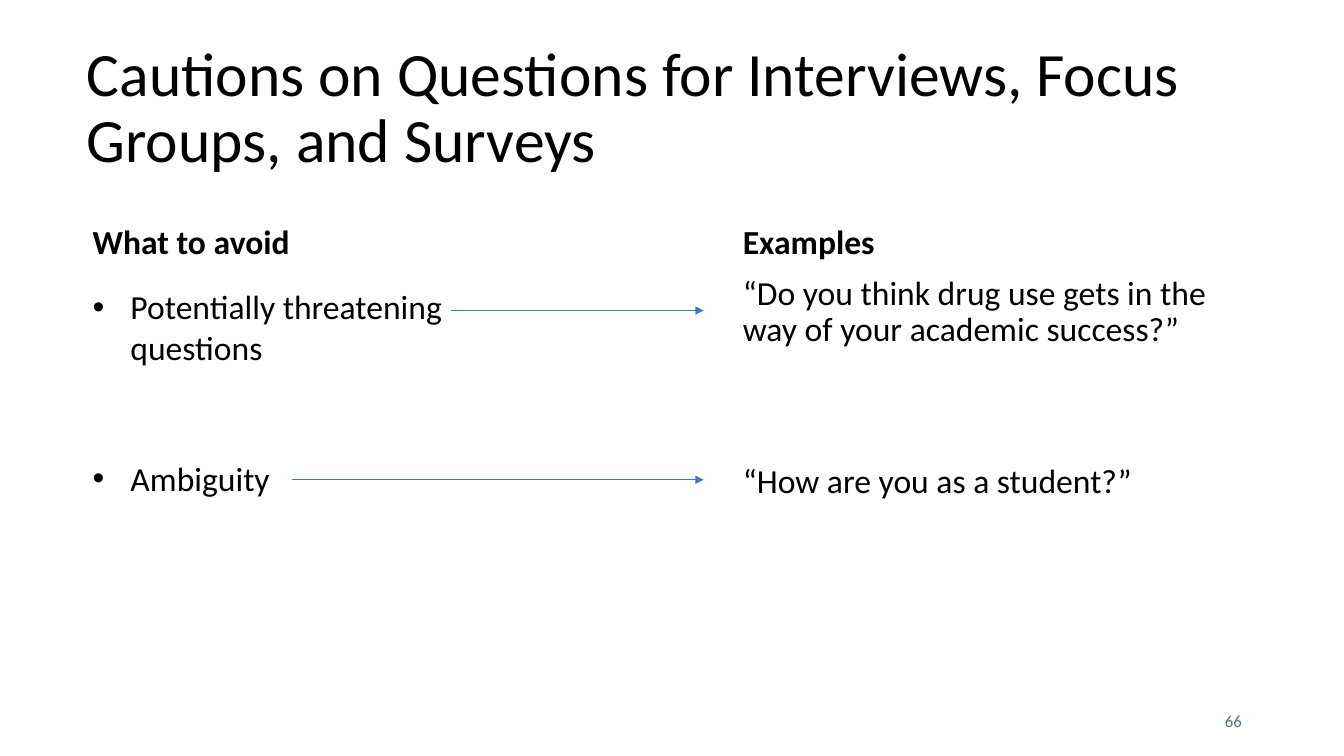
from lxml import etree
from pptx import Presentation
from pptx.dml.color import RGBColor
from pptx.enum import shapes, text
from pptx.oxml import ns
from pptx.util import Pt

# Content
TITLE = "Cautions on Questions for Interviews, Focus Groups, and Surveys"
SLIDE_NUMBER = "66"
# Each line: wording, space before, bulleted
AVOID = [
    ("What to avoid", 0, False),
    ("Potentially threatening questions", 18, True),
    ("Ambiguity", 65, True),
]
EXAMPLES = [
    ("Examples", 0, False),
    ("“Do you think drug use gets in the way of your academic success?”", 10, False),
    ("“How are you as a student?”", 82.5, False),
]
# Arrows: start x, y
ARROWS = [(321.8, 221.8), (208.8, 342.7)]
ARROW_END = 502.6

THEME = {
    "font": "Calibri",
    "text": RGBColor.from_string("000000"),
    "number": RGBColor.from_string("576F7F"),
    "arrow": RGBColor.from_string("4472C4"),
    "title_size": 44,
    "body_size": 24,
    "number_size": 12,
    "arrow_width": 0.5,
    "indent": 27,
}


def place(shape, left, top, width, height):
    shape.left, shape.top, shape.width, shape.height = map(Pt, (left, top, width, height))


def set_font(paragraph, size, color, bold=False):
    font = paragraph.font
    font.name, font.size, font.bold = THEME["font"], Pt(size), bold
    font.color.rgb = color


def set_bullet(paragraph, bulleted):
    properties = paragraph._p.get_or_add_pPr()
    indent = Pt(THEME["indent"]) if bulleted else 0
    properties.set("marL", str(indent))
    properties.set("indent", str(-indent))
    if bulleted:
        etree.SubElement(properties, ns.qn("a:buChar")).set("char", "•")
    else:
        etree.SubElement(properties, ns.qn("a:buNone"))


def fill_column(shape, lines, line_spacing):
    frame = shape.text_frame
    frame.auto_size = text.MSO_AUTO_SIZE.NONE
    for index, (wording, space, bulleted) in enumerate(lines):
        paragraph = frame.add_paragraph() if index else frame.paragraphs[0]
        paragraph.text = wording
        set_bullet(paragraph, bulleted)
        paragraph.line_spacing = line_spacing
        paragraph.space_before = Pt(space)
        set_font(paragraph, THEME["body_size"], THEME["text"], bold=index == 0)


def add_arrow(slide, left, y):
    arrow = slide.shapes.add_connector(
        shapes.MSO_CONNECTOR.STRAIGHT, Pt(left), Pt(y), Pt(ARROW_END), Pt(y))
    arrow.line.color.rgb = THEME["arrow"]
    arrow.line.width = Pt(THEME["arrow_width"])
    etree.SubElement(arrow.line._get_or_add_ln(), ns.qn("a:tailEnd")).set("type", "triangle")
    etree.SubElement(arrow._element.spPr, ns.qn("a:effectLst"))


def main():
    presentation = Presentation()
    presentation.slide_width, presentation.slide_height = Pt(960), Pt(540)
    slide = presentation.slides.add_slide(presentation.slide_layouts.get_by_name("Two Content"))
    title, avoid, examples = slide.placeholders

    # Title
    place(title, 54.7, 54, 861, 48.2)
    frame = title.text_frame
    frame.text = TITLE
    frame.auto_size = text.MSO_AUTO_SIZE.NONE
    frame.vertical_anchor = text.MSO_ANCHOR.MIDDLE
    paragraph = frame.paragraphs[0]
    paragraph.alignment = text.PP_ALIGN.LEFT
    paragraph.line_spacing = 0.9
    set_font(paragraph, THEME["title_size"], THEME["text"])

    # Columns
    place(avoid, 66.2, 157.7, 285.8, 317.5)
    frame = avoid.text_frame
    frame.margin_left = frame.margin_top = frame.margin_right = frame.margin_bottom = 0
    fill_column(avoid, AVOID, 1.0)
    place(examples, 523.4, 157.7, 368.6, 326.2)
    fill_column(examples, EXAMPLES, 0.9)

    # Arrows from each caution to its example
    for left, y in ARROWS:
        add_arrow(slide, left, y)

    # Slide number
    number = slide.shapes.add_textbox(Pt(678.2), Pt(500.4), Pt(216), Pt(28.8))
    frame = number.text_frame
    frame.word_wrap = True
    frame.vertical_anchor = text.MSO_ANCHOR.MIDDLE
    frame.text = SLIDE_NUMBER
    frame.paragraphs[0].alignment = text.PP_ALIGN.RIGHT
    set_font(frame.paragraphs[0], THEME["number_size"], THEME["number"])

    presentation.save("out.pptx")


if __name__ == "__main__":
    main()
